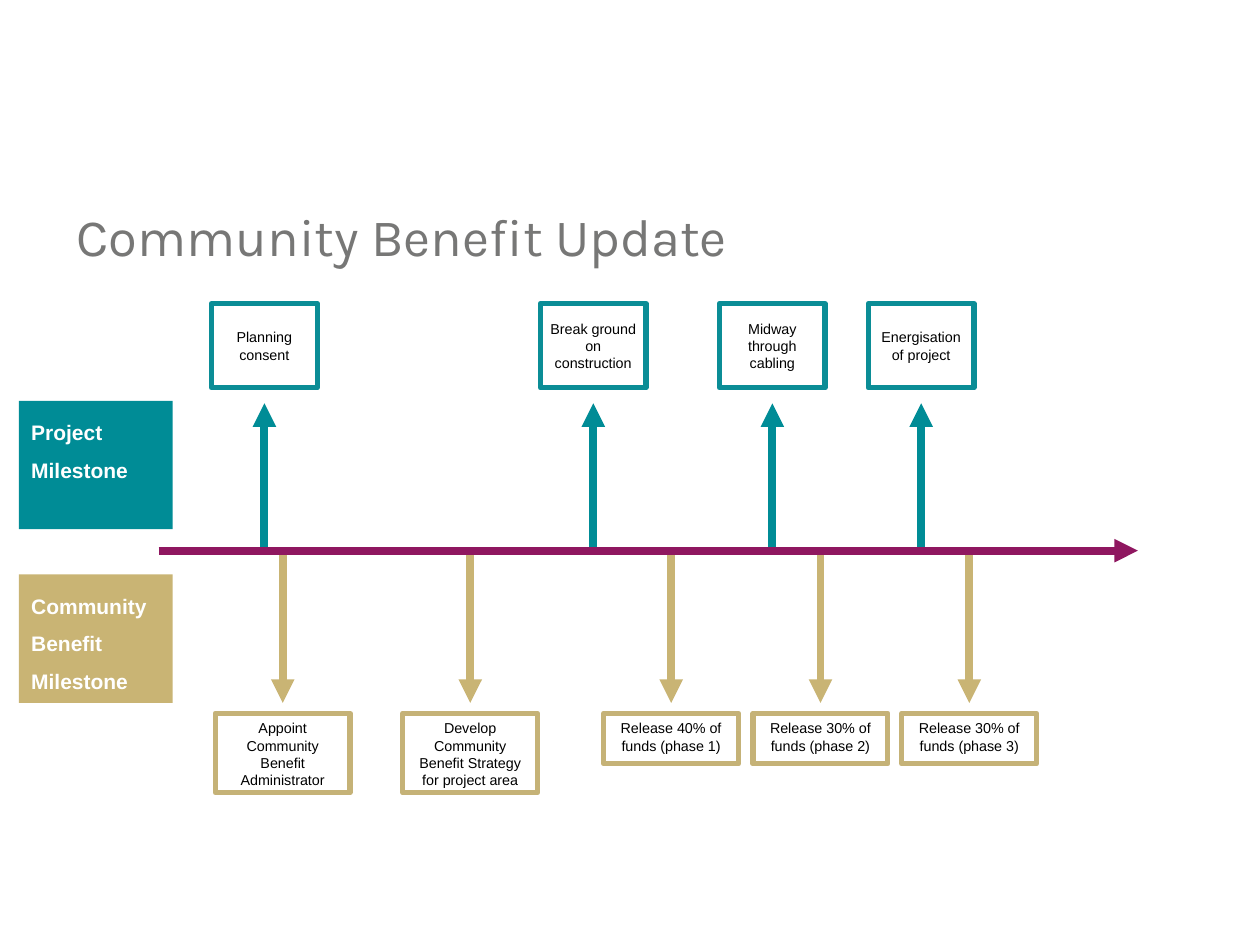
import pptx
import pptx.dml.color
import pptx.enum.shapes
import pptx.enum.text
import pptx.oxml
import pptx.oxml.ns
import pptx.util

Cm = pptx.util.Cm
Pt = pptx.util.Pt
ALIGN = pptx.enum.text.PP_ALIGN
ANCHOR = pptx.enum.text.MSO_ANCHOR

COLOURS = {
    "title": "777776", "text": "000000", "white": "FFFFFF", "axis": "8F1760",
    "project": "008C96", "project_border": "0B8D96",
    "benefit": "C9B474", "benefit_border": "C5B277",
}
AXIS_Y = 11.1

# Centre of each milestone, its words and the height of its box, in cm
PROJECT_MILESTONES = [
    (5.33, "Planning consent", 1.7),
    (11.96, "Break ground on construction", 1.7),
    (15.57, "Midway through cabling", 1.7),
    (18.57, "Energisation of project", 1.7),
]
BENEFIT_MILESTONES = [
    (5.7, "Appoint Community Benefit Administrator", 1.6),
    (9.48, "Develop Community Benefit Strategy for project area", 1.6),
    (13.53, "Release 40% of funds (phase 1)", 1.02),
    (16.54, "Release 30% of funds (phase 2)", 1.02),
    (19.54, "Release 30% of funds (phase 3)", 1.02),
]


def colour(name):
    return pptx.dml.color.RGBColor.from_string(COLOURS[name])


def set_text(shape, text, size, colour_name, font="Arial", bold=False):
    shape.text_frame.word_wrap = True
    shape.text_frame.text = text
    paragraph = shape.text_frame.paragraphs[0]
    run_font = paragraph.runs[0].font
    run_font.name, run_font.size, run_font.bold = font, Pt(size), bold
    run_font.color.rgb = colour(colour_name)
    return paragraph


def add_box(slide, left, top, width, height, fill=None, border=None):
    shape = slide.shapes.add_shape(
        pptx.enum.shapes.MSO_SHAPE.RECTANGLE,
        Cm(left), Cm(top), Cm(width), Cm(height))
    shape.shadow.inherit = False
    if fill:
        shape.fill.solid()
        shape.fill.fore_color.rgb = colour(fill)
    else:
        shape.fill.background()
    if border:
        shape.line.color.rgb = colour(border)
        shape.line.width = Pt(3)
    else:
        shape.line.fill.background()
    return shape


def add_arrow(slide, start, end, colour_name):
    arrow = slide.shapes.add_connector(
        pptx.enum.shapes.MSO_CONNECTOR.STRAIGHT,
        *(Cm(value) for value in start + end))
    arrow.line.color.rgb = colour(colour_name)
    arrow.line.width = Pt(4.5)
    head = pptx.oxml.parse_xml(
        f'<a:tailEnd {pptx.oxml.ns.nsdecls("a")} type="triangle"/>')
    arrow.line._get_or_add_ln().append(head)
    arrow._element.spPr.append(
        pptx.oxml.parse_xml(f'<a:effectLst {pptx.oxml.ns.nsdecls("a")}/>'))


def add_title(slide, left, top, width, height):
    title = slide.shapes.add_textbox(Cm(left), Cm(top), Cm(width), Cm(height))
    paragraph = set_text(title, "Community Benefit Update", 30, "title", "Karla")
    paragraph.line_spacing = Pt(40.4)
    paragraph.space_after = Pt(6)


def add_row_label(slide, left, top, width, height, text, fill):
    label = add_box(slide, left, top, width, height, fill)
    label.text_frame.vertical_anchor = ANCHOR.TOP
    paragraph = set_text(label, text, 12, "white", bold=True)
    paragraph.alignment = ALIGN.LEFT
    paragraph.line_spacing = 1.5


def add_milestones(slide, milestones, row, top, width, arrow_start, arrow_end,
                   fill, anchor, inset):
    """Place one row of bordered boxes, each with an arrow from the axis."""
    for centre, text, height in milestones:
        add_arrow(slide, (centre, arrow_start), (centre, arrow_end), row)
        box = add_box(slide, centre - width / 2, top, width, height,
                      fill, f"{row}_border")
        frame = box.text_frame
        frame.margin_left = frame.margin_right = Cm(inset)
        frame.vertical_anchor = anchor
        set_text(box, text, 8.2, "text").alignment = ALIGN.CENTER


def main():
    presentation = pptx.Presentation()
    presentation.slide_width, presentation.slide_height = Cm(25.4), Cm(19.05)
    slide = presentation.slides.add_slide(presentation.slide_layouts[6])

    add_title(slide, 1.3, 3.84, 23.24, 1.68)

    # Row labels
    add_row_label(slide, 0.38, 8.08, 3.1, 2.59, "Project Milestone", "project")
    add_row_label(slide, 0.38, 11.58, 3.1, 2.59,
                  "Community Benefit Milestone", "benefit")

    # Milestones above and below the axis
    add_milestones(slide, PROJECT_MILESTONES, "project", 6.12, 2.13,
                   AXIS_Y - 0.05, 8.13, None, ANCHOR.MIDDLE, 0.18)
    add_milestones(slide, BENEFIT_MILESTONES, "benefit", 14.38, 2.72,
                   AXIS_Y, 14.17, "white", ANCHOR.TOP, 0.25)

    # Time axis, in front of the arrows
    add_arrow(slide, (3.2, AXIS_Y), (22.94, AXIS_Y), "axis")

    presentation.save("out.pptx")


if __name__ == "__main__":
    main()
